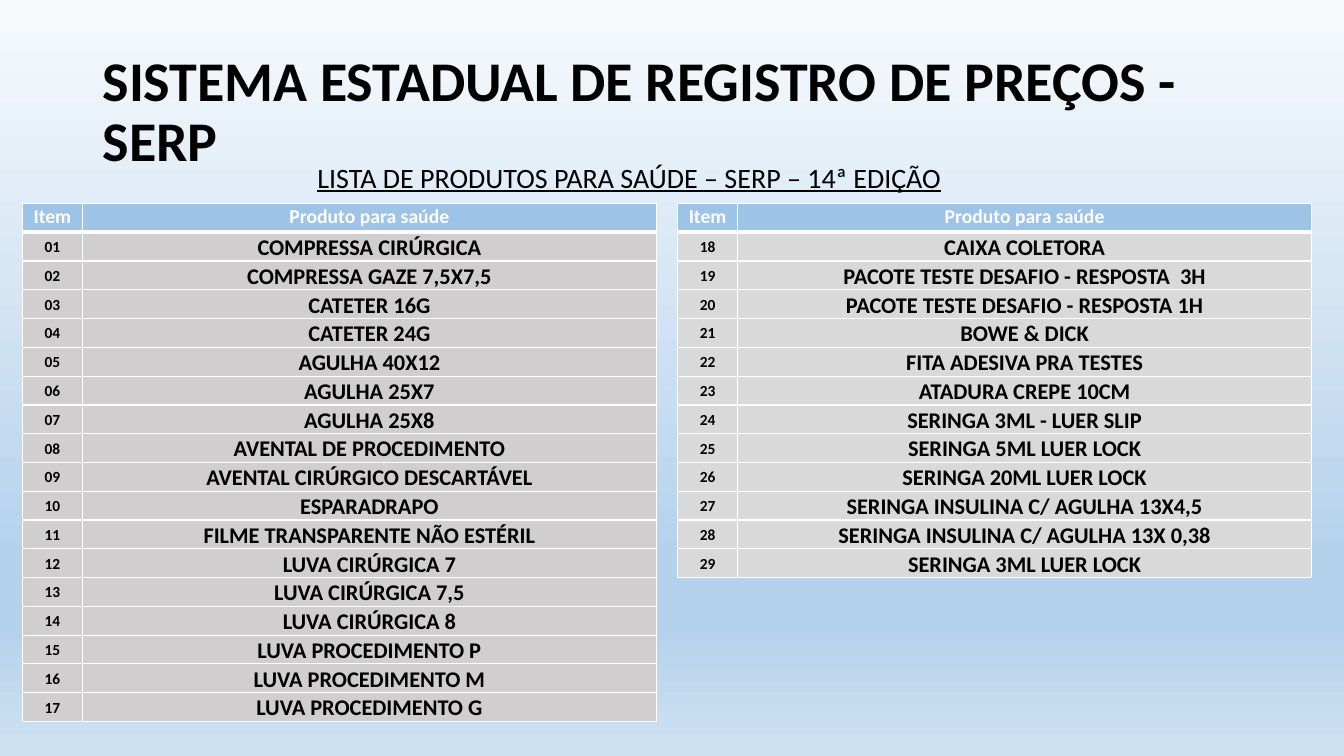
from dataclasses import dataclass

from lxml import etree
from pptx import Presentation
from pptx.dml import color
from pptx.enum import text
from pptx.oxml import ns
from pptx.util import Pt

TITLE = "SISTEMA ESTADUAL DE REGISTRO DE PREÇOS - SERP"
SUBTITLE = "LISTA DE PRODUTOS PARA SAÚDE – SERP – 14ª EDIÇÃO"
HEADERS = ("Item", "Produto para saúde")
FIRST_PRODUCTS = [
    "COMPRESSA CIRÚRGICA",
    "COMPRESSA GAZE 7,5X7,5",
    "CATETER 16G",
    "CATETER 24G",
    "AGULHA 40X12",
    "AGULHA 25X7",
    "AGULHA 25X8",
    "AVENTAL DE PROCEDIMENTO",
    "AVENTAL CIRÚRGICO DESCARTÁVEL",
    "ESPARADRAPO",
    "FILME TRANSPARENTE NÃO ESTÉRIL",
    "LUVA CIRÚRGICA 7",
    "LUVA CIRÚRGICA 7,5",
    "LUVA CIRÚRGICA 8",
    "LUVA PROCEDIMENTO P",
    "LUVA PROCEDIMENTO M",
    "LUVA PROCEDIMENTO G",
]
SECOND_PRODUCTS = [
    "CAIXA COLETORA",
    "PACOTE TESTE DESAFIO - RESPOSTA  3H",
    "PACOTE TESTE DESAFIO - RESPOSTA 1H",
    "BOWE & DICK",
    "FITA ADESIVA PRA TESTES",
    "ATADURA CREPE 10CM",
    "SERINGA 3ML - LUER SLIP",
    "SERINGA 5ML LUER LOCK",
    "SERINGA 20ML LUER LOCK",
    "SERINGA INSULINA C/ AGULHA 13X4,5",
    "SERINGA INSULINA C/ AGULHA 13X 0,38",
    "SERINGA 3ML LUER LOCK",
]


@dataclass(frozen=True)
class Theme:
    font: str = "Calibri"
    ink: str = "000000"
    white: str = "FFFFFF"
    header: str = "9DC3E6"
    first_body: str = "D0CECE"
    second_body: str = "D9D9D9"
    sky: tuple = ((0, "F7FAFD"), (74, "B5D2EC"), (83, "B5D2EC"), (100, "CEE1F2"))
    title: int = 40
    subtitle: int = 20
    heading: int = 14
    number: int = 11
    product: int = 16
    thin: int = 1
    thick: int = 3


THEME = Theme()
SLIDE_SIZE = (960, 540)
TITLE_BOX = (66.24, 28.8, 861.12, 104.4)
SUBTITLE_BOX = (219.6, 110.88, 468.72, 31.68)
TABLE_TOP = 145.44
TABLE_LEFTS = (15.84, 483.84)
COLUMNS = (43.2, 409.68)
ROW_HEIGHT = 20.52
CELL_INSET = 5.04


def add_span(para, words, size, ink=THEME.ink, bold=False, underline=False):
    span = para.add_run()
    span.text = words
    span.font.name = THEME.font
    span.font.size = Pt(size)
    span.font.bold = bold
    span.font.underline = underline
    span.font.color.rgb = color.RGBColor.from_string(ink)


def add_box(page, place):
    box = page.shapes.add_textbox(*map(Pt, place))
    box.text_frame.word_wrap = True
    return box.text_frame


def add_solid(parent, shade):
    fill = etree.SubElement(parent, ns.qn("a:solidFill"))
    etree.SubElement(fill, ns.qn("a:srgbClr"), val=shade)


def paint_background(page):
    fill = page.background.fill
    fill.gradient()
    fill.gradient_angle = 270
    stops = page.element.find(".//" + ns.qn("a:gsLst"))
    stops[:] = []
    for percent, shade in THEME.sky:
        stop = etree.SubElement(stops, ns.qn("a:gs"), pos=str(percent * 1000))
        etree.SubElement(stop, ns.qn("a:srgbClr"), val=shade)


def add_borders(cell, top, bottom):
    properties = cell._tc.get_or_add_tcPr()
    widths = {"L": THEME.thin, "R": THEME.thin, "T": top, "B": bottom}
    for side, width in widths.items():
        line = etree.SubElement(properties, ns.qn(f"a:ln{side}"), w=str(Pt(width)))
        add_solid(line, THEME.white)


def fill_cell(cell, words, size, row, body):
    is_header = row == 0
    add_borders(
        cell,
        top=THEME.thick if row == 1 else THEME.thin,
        bottom=THEME.thick if is_header else THEME.thin,
    )
    cell.fill.solid()
    cell.fill.fore_color.rgb = color.RGBColor.from_string(THEME.header if is_header else body)
    cell.margin_left = cell.margin_right = Pt(CELL_INSET)
    cell.margin_top = cell.margin_bottom = Pt(0)
    cell.vertical_anchor = text.MSO_ANCHOR.TOP if is_header else text.MSO_ANCHOR.MIDDLE
    para = cell.text_frame.paragraphs[0]
    para.alignment = text.PP_ALIGN.CENTER
    para.line_spacing = 1.07
    add_span(para, words, size, THEME.white if is_header else THEME.ink, bold=True)


def add_product_table(page, left, products, first_number, body):
    rows = [HEADERS] + [(f"{n:02d}", name) for n, name in enumerate(products, first_number)]
    place = (left, TABLE_TOP, sum(COLUMNS), ROW_HEIGHT * len(rows))
    table = page.shapes.add_table(len(rows), len(COLUMNS), *map(Pt, place)).table
    table.horz_banding = False
    for column, width in zip(table.columns, COLUMNS):
        column.width = Pt(width)
    for r, values in enumerate(rows):
        table.rows[r].height = Pt(ROW_HEIGHT)
        sizes = (THEME.number, THEME.product) if r else (THEME.heading, THEME.heading)
        for c, (words, size) in enumerate(zip(values, sizes)):
            fill_cell(table.cell(r, c), words, size, r, body)


def main():
    deck = Presentation()
    deck.slide_width, deck.slide_height = map(Pt, SLIDE_SIZE)
    page = deck.slides.add_slide(deck.slide_layouts[6])
    paint_background(page)

    title = add_box(page, TITLE_BOX)
    title.vertical_anchor = text.MSO_ANCHOR.MIDDLE
    title.paragraphs[0].line_spacing = 0.9
    add_span(title.paragraphs[0], TITLE, THEME.title, bold=True)

    add_product_table(page, TABLE_LEFTS[0], FIRST_PRODUCTS, 1, THEME.first_body)
    add_product_table(
        page, TABLE_LEFTS[1], SECOND_PRODUCTS, len(FIRST_PRODUCTS) + 1, THEME.second_body
    )

    subtitle = add_box(page, SUBTITLE_BOX)
    add_span(subtitle.paragraphs[0], SUBTITLE, THEME.subtitle, underline=True)
    deck.save("out.pptx")


if __name__ == "__main__":
    main()
